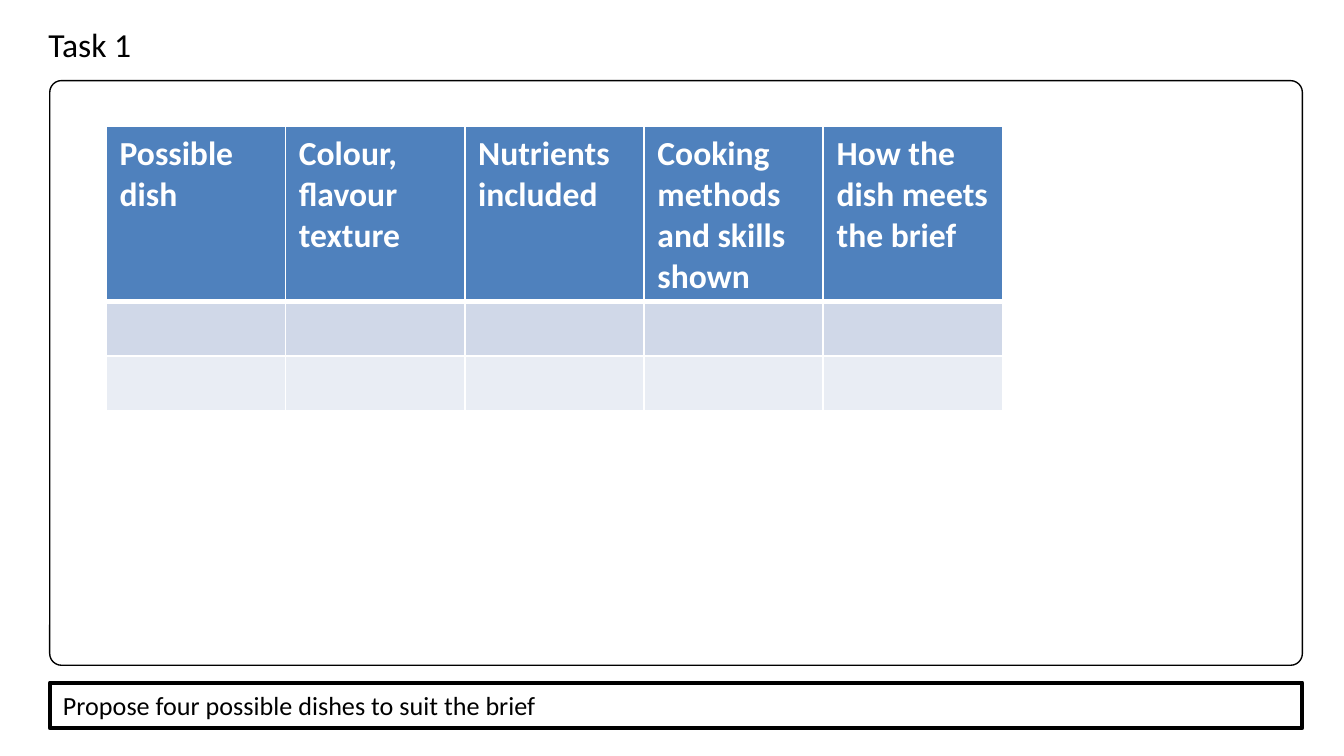
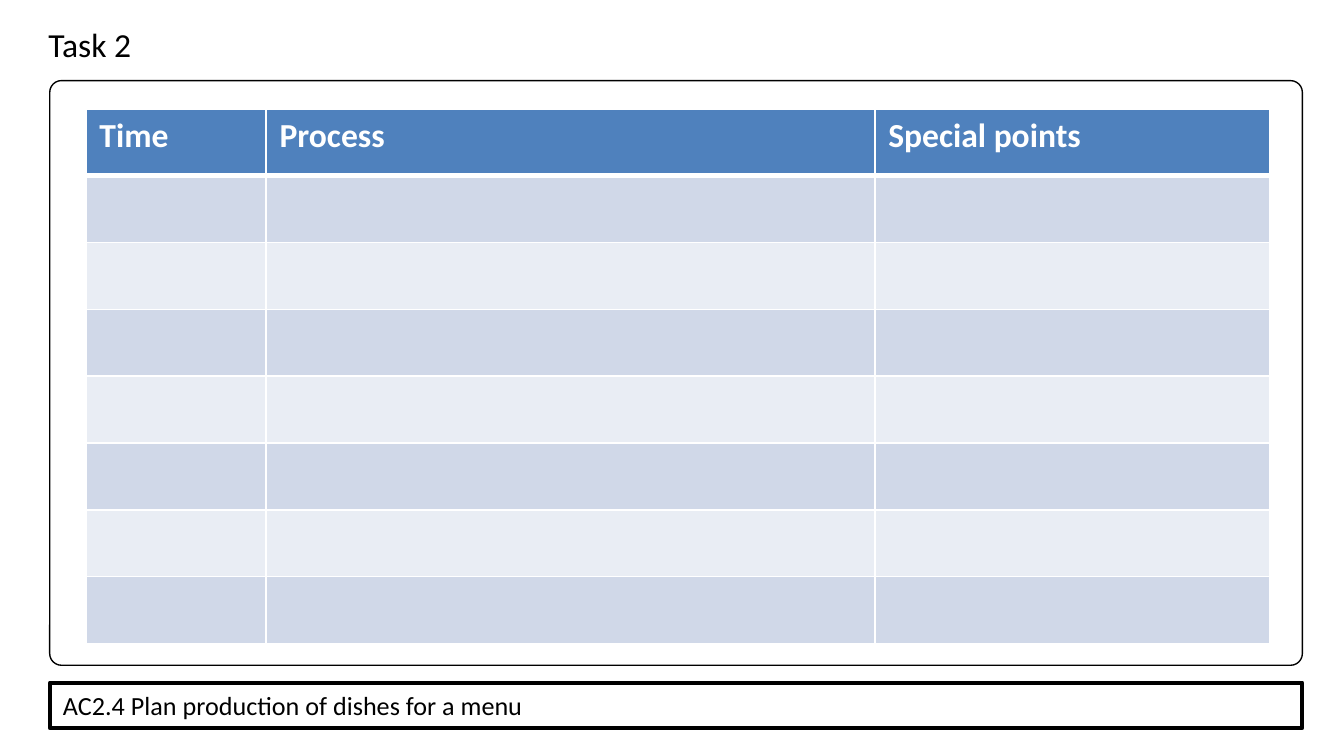
from dataclasses import dataclass

from pptx import Presentation
from pptx import util as u
from pptx.dml.color import RGBColor
from pptx.enum import shapes, text
from pptx.oxml import parse_xml
from pptx.oxml.ns import nsdecls


@dataclass(frozen=True)
class Theme:
    font: str = "Calibri"
    ink: str = "000000"
    paper: str = "FFFFFF"
    header: str = "4F81BD"
    bands: tuple = ("D0D8E8", "E9EDF4")
    heading_size: int = 18
    footer_size: int = 14


@dataclass(frozen=True)
class Box:
    left: float
    top: float
    width: float
    height: float

    def emu(self):
        return [u.Inches(v) for v in (self.left, self.top, self.width, self.height)]


THEME = Theme()
SLIDE = Box(0, 0, 10, 10 * 9 / 16)
TITLE = Box(0.26, 0.13, 5.95, 0.4)
PANEL = Box(0.37, 0.6, 9.32, 4.35)
FOOTER = Box(0.37, 5.08, 9.32, 0.34)


def rgb(code):
    return RGBColor.from_string(code)


def write(frame, words, size, color, bold=False):
    frame.text = words
    paragraph = frame.paragraphs[0]
    paragraph.alignment = text.PP_ALIGN.LEFT
    font = paragraph.font
    font.name, font.size, font.bold = THEME.font, u.Pt(size), bold
    font.color.rgb = rgb(color)


def add_title(slide, words, box):
    title = slide.shapes.title
    title.left, title.top, title.width, title.height = box.emu()
    frame = title.text_frame
    write(frame, words, THEME.heading_size, THEME.ink)
    frame.word_wrap = True
    frame.vertical_anchor = text.MSO_ANCHOR.TOP
    frame.auto_size = text.MSO_AUTO_SIZE.SHAPE_TO_FIT_TEXT


def add_outline(slide, kind, box, weight):
    outline = slide.shapes.add_shape(kind, *box.emu())
    outline.shadow.inherit = False
    outline.fill.background()
    outline.line.color.rgb = rgb(THEME.ink)
    outline.line.width = u.Pt(weight)
    return outline


def add_footer(slide, words, box):
    footer = add_outline(slide, shapes.MSO_SHAPE.RECTANGLE, box, 2)
    footer.fill.solid()
    footer.fill.fore_color.rgb = rgb(THEME.paper)
    write(footer.text_frame, words, THEME.footer_size, THEME.ink)
    footer.text_frame.word_wrap = True
    footer.text_frame.auto_size = text.MSO_AUTO_SIZE.SHAPE_TO_FIT_TEXT


def add_panel(slide, box):
    panel = add_outline(slide, shapes.MSO_SHAPE.ROUNDED_RECTANGLE, box, 0.75)
    panel.adjustments[0] = 0.02


def style_cell(cell, row):
    """Fill by band and rule in white, thicker under the header."""
    weights = {"L": 1, "R": 1, "T": 3 if row == 1 else 1, "B": 3 if row == 0 else 1}
    properties = cell._tc.get_or_add_tcPr()
    for side, weight in weights.items():
        properties.append(parse_xml(
            f'<a:ln{side} {nsdecls("a")} w="{u.Pt(weight)}"><a:solidFill>'
            f'<a:srgbClr val="{THEME.paper}"/></a:solidFill></a:ln{side}>'))
    cell.fill.solid()
    cell.fill.fore_color.rgb = rgb(THEME.bands[(row - 1) % 2] if row else THEME.header)


def add_grid(slide, box, headings, columns, rows):
    """Add a table whose columns and rows are weights sharing the box."""
    table = slide.shapes.add_table(len(rows), len(columns), *box.emu()).table
    for column, weight in zip(table.columns, columns):
        column.width = u.Inches(box.width * weight / sum(columns))
    for index, weight in enumerate(rows):
        table.rows[index].height = u.Inches(box.height * weight / sum(rows))
        for cell in table.rows[index].cells:
            style_cell(cell, index)
            cell.text_frame.paragraphs[0].font.size = u.Pt(THEME.heading_size)
    for cell, heading in zip(table.rows[0].cells, headings):
        write(cell.text_frame, heading, THEME.heading_size, THEME.paper, bold=True)


def add_task(deck, title, brief, grid_box, headings, columns, rows):
    slide = deck.slides.add_slide(deck.slide_layouts[5])
    add_title(slide, title, TITLE)
    add_footer(slide, brief, FOOTER)
    add_panel(slide, PANEL)
    add_grid(slide, grid_box, headings, columns, rows)


def main():
    deck = Presentation()
    deck.slide_width, deck.slide_height = u.Inches(SLIDE.width), u.Inches(SLIDE.height)
    add_task(deck, "Task 1", "Propose four possible dishes to suit the brief",
             Box(0.79, 0.94, 6.67, 2.11),
             ["Possible dish", "Colour, flavour texture", "Nutrients included",
              "Cooking methods and skills shown", "How the dish meets the brief"],
             columns=[1] * 5, rows=[1.29, 0.41, 0.41])
    add_task(deck, "Task 2", "AC2.4 Plan production of dishes for a menu",
             Box(0.64, 0.81, 8.81, 3.98),
             ["Time", "Process", "Special points"],
             columns=[1.34, 4.53, 2.94], rows=[1] * 8)
    deck.save("out.pptx")


if __name__ == "__main__":
    main()
